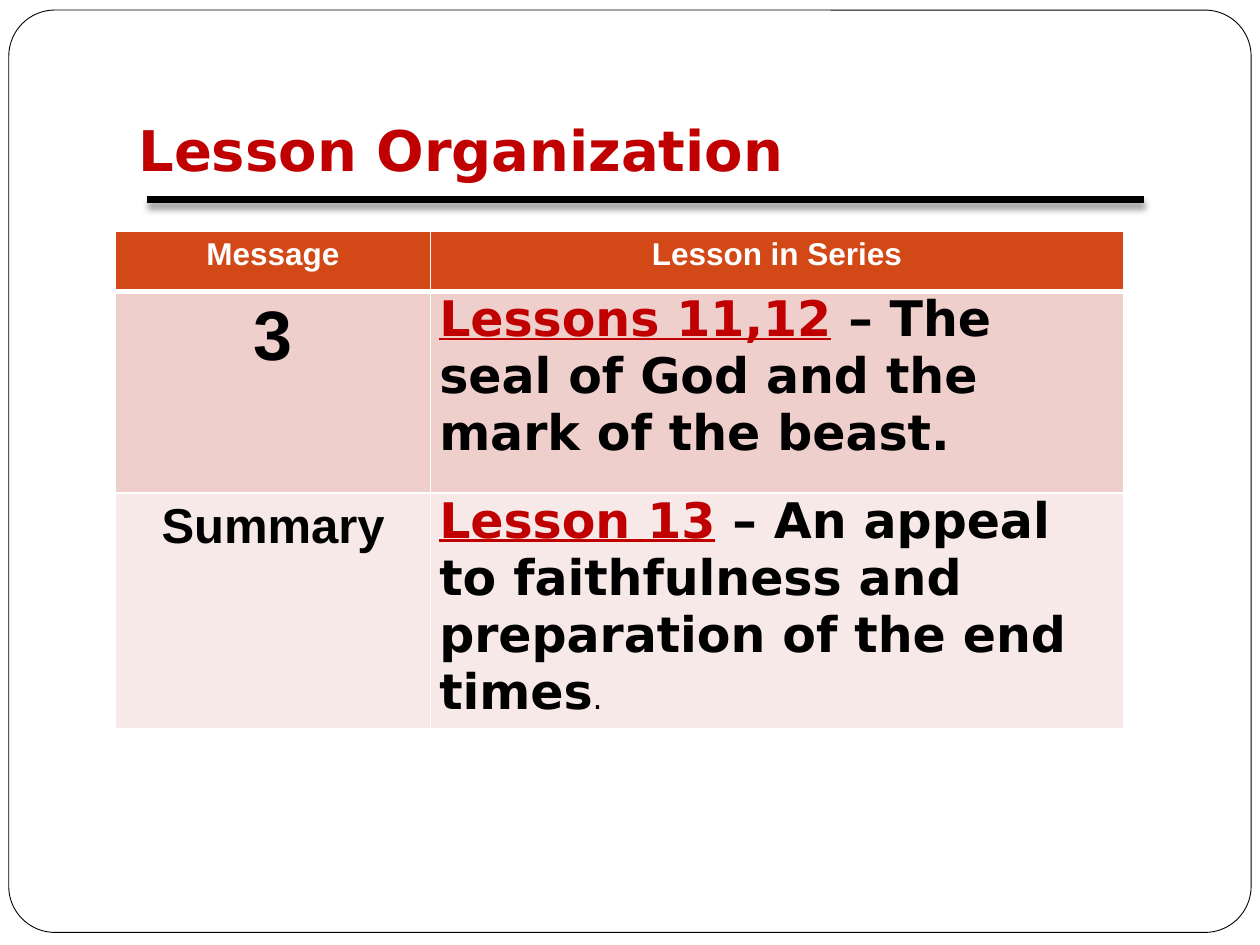
from lxml import etree
from pptx import Presentation
from pptx.dml.color import RGBColor
from pptx.enum.shapes import MSO_CONNECTOR, MSO_SHAPE
from pptx.enum.text import MSO_ANCHOR, PP_ALIGN
from pptx.oxml.ns import qn
from pptx.util import Inches, Pt

ROUNDED = MSO_SHAPE.ROUNDED_RECTANGLE
STRAIGHT = MSO_CONNECTOR.STRAIGHT
BOTTOM = MSO_ANCHOR.BOTTOM
CENTER, LEFT = PP_ALIGN.CENTER, PP_ALIGN.LEFT

COLORS = {"white": "FFFFFF", "black": "000000", "red": "C00000",
          "header": "D34817", "band": "EFCFCC", "pale": "F7E9E8"}
SANS, WIDE = "Arial", "DejaVu Sans"


def rgb(name):
    return RGBColor.from_string(COLORS[name])


def u(n):
    """Length of n units on a grid of 120 columns by 90 rows."""
    return Inches(n / 12)


def add_run(p, text, size=28, font=WIDE, color="black", bold=True, underline=False):
    r = p.add_run()
    r.text = text
    f = r.font
    f.size, f.name, f.bold, f.underline = Pt(size), font, bold, underline
    f.color.rgb = rgb(color)


def sub(parent, tag, **attrs):
    return etree.SubElement(parent, qn(tag), {k: str(v) for k, v in attrs.items()})


class LessonSlide:
    def __init__(self, prs):
        self.s = prs.slides.add_slide(prs.slide_layouts[6])

    def frame(self, x, y, w, h):
        sp = self.s.shapes.add_shape(ROUNDED, u(x), u(y), u(w), u(h))
        sp.adjustments[0] = 0.05
        sp.shadow.inherit = False
        sp.fill.solid()
        sp.fill.fore_color.rgb = rgb("white")
        sp.line.color.rgb = rgb("black")
        sp.line.width = Pt(0.5)

    def rule(self, x1, x2, y):
        line = self.s.shapes.add_connector(STRAIGHT, u(x1), u(y), u(x2), u(y))
        line.line.color.rgb = rgb("black")
        line.line.width = Pt(4.5)
        effects = sub(line._element.spPr, "a:effectLst")
        shadow = sub(effects, "a:outerShdw", blurRad=Pt(4), dist=Pt(3),
                     dir=90 * 60000, rotWithShape=0)
        sub(sub(shadow, "a:srgbClr", val=COLORS["black"]), "a:alpha", val=40000)

    def title(self, text, x, y, w, h):
        tf = self.s.shapes.add_textbox(u(x), u(y), u(w), u(h)).text_frame
        tf.word_wrap = True
        tf.vertical_anchor = BOTTOM
        tf.margin_bottom = Inches(0.1)
        add_run(tf.paragraphs[0], text, size=32, color="red")

    def table(self, x, y, widths, heights, rows, fills):
        shape = self.s.shapes.add_table(len(rows), len(widths), u(x), u(y),
                                        u(sum(widths)), u(sum(heights)))
        table = shape.table
        for column, width in zip(table.columns, widths):
            column.width = u(width)
        for i, (row, height, fill) in enumerate(zip(rows, heights, fills)):
            table.rows[i].height = u(height)
            for j, runs in enumerate(row):
                self.cell(table.cell(i, j), runs, fill, header=i == 0,
                          body=i > 0 and j > 0)

    def cell(self, cell, runs, fill, header, body):
        if body:
            cell.margin_left = cell.margin_right = Inches(0.07)
            cell.margin_top = cell.margin_bottom = 0
        tcPr = cell._tc.get_or_add_tcPr()
        for side in "LRTB":
            # The header is set off by a thicker line below it
            width = Pt(3 if header and side == "B" else 1)
            ln = sub(tcPr, f"a:ln{side}", w=width)
            sub(sub(ln, "a:solidFill"), "a:srgbClr", val=COLORS["white"])
        cell.fill.solid()
        cell.fill.fore_color.rgb = rgb(fill)
        p = cell.text_frame.paragraphs[0]
        p.alignment = LEFT if body else CENTER
        for text, style in runs:
            add_run(p, text, **style)


def main():
    prs = Presentation()
    prs.slide_width, prs.slide_height = u(120), u(90)
    slide = LessonSlide(prs)

    # Frame and heading
    slide.frame(0.84, 0.96, 118.32, 87.84)
    slide.rule(14, 109, 19)
    slide.title("Lesson Organization", 12, 4, 77, 14.6)

    # Lesson table
    head = dict(size=18, font=SANS, color="white")
    lesson = dict(color="red", underline=True)
    rows = [
        [[("Message", head)], [("Lesson in Series", head)]],
        [[("3", dict(size=40, font=SANS))],
         [("Lessons 11,12", lesson),
          (" – The seal of God and the mark of the beast.", {})]],
        [[("Summary", dict(font=SANS))],
         [("Lesson 13", lesson),
          (" – An appeal to faithfulness and preparation of the end times", {}),
          (".", dict(size=18, bold=False))]],
    ]
    slide.table(11, 22, [30, 66], [5.76, 19.2, 16.92], rows,
                ["header", "band", "pale"])

    prs.save("out.pptx")


if __name__ == "__main__":
    main()
